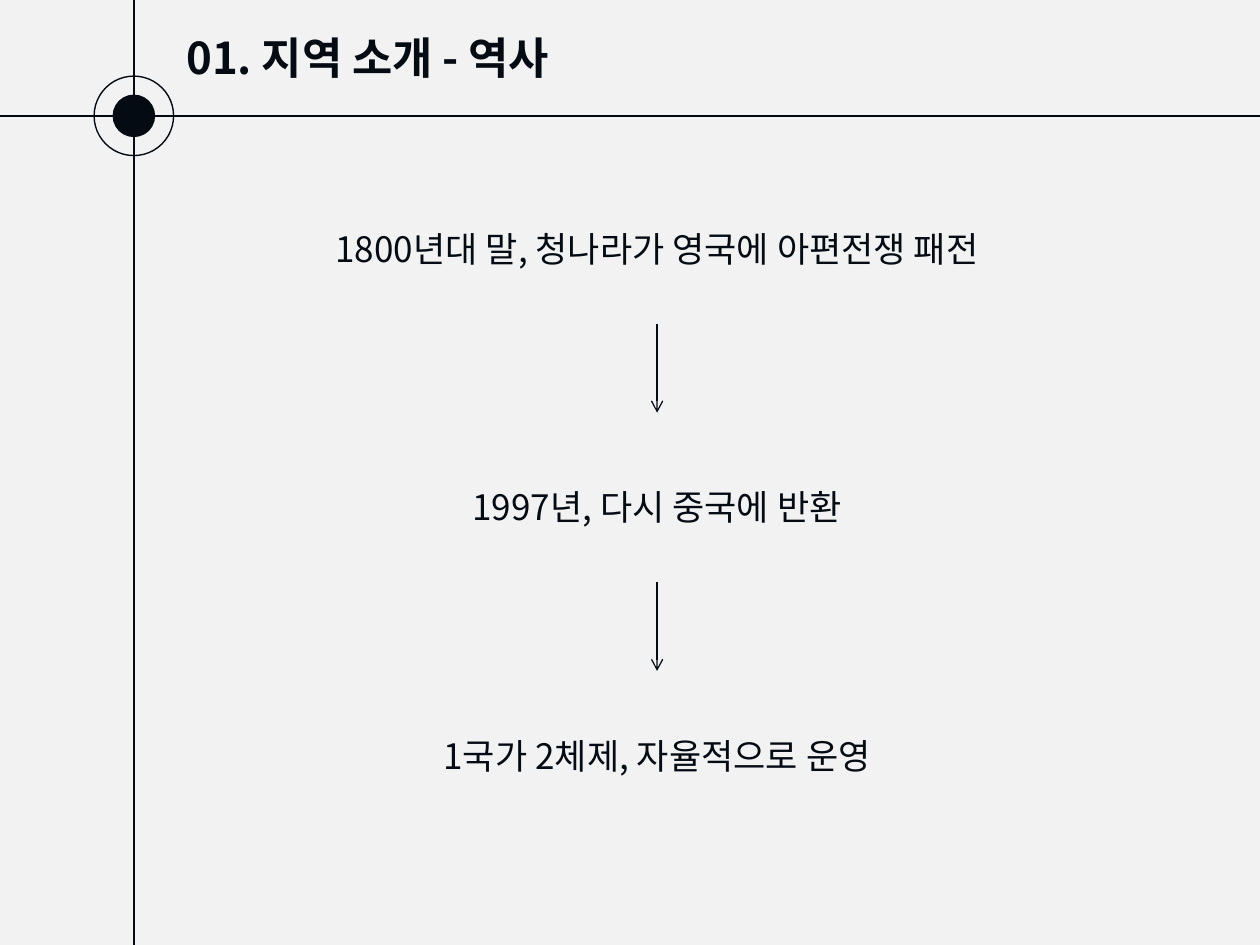
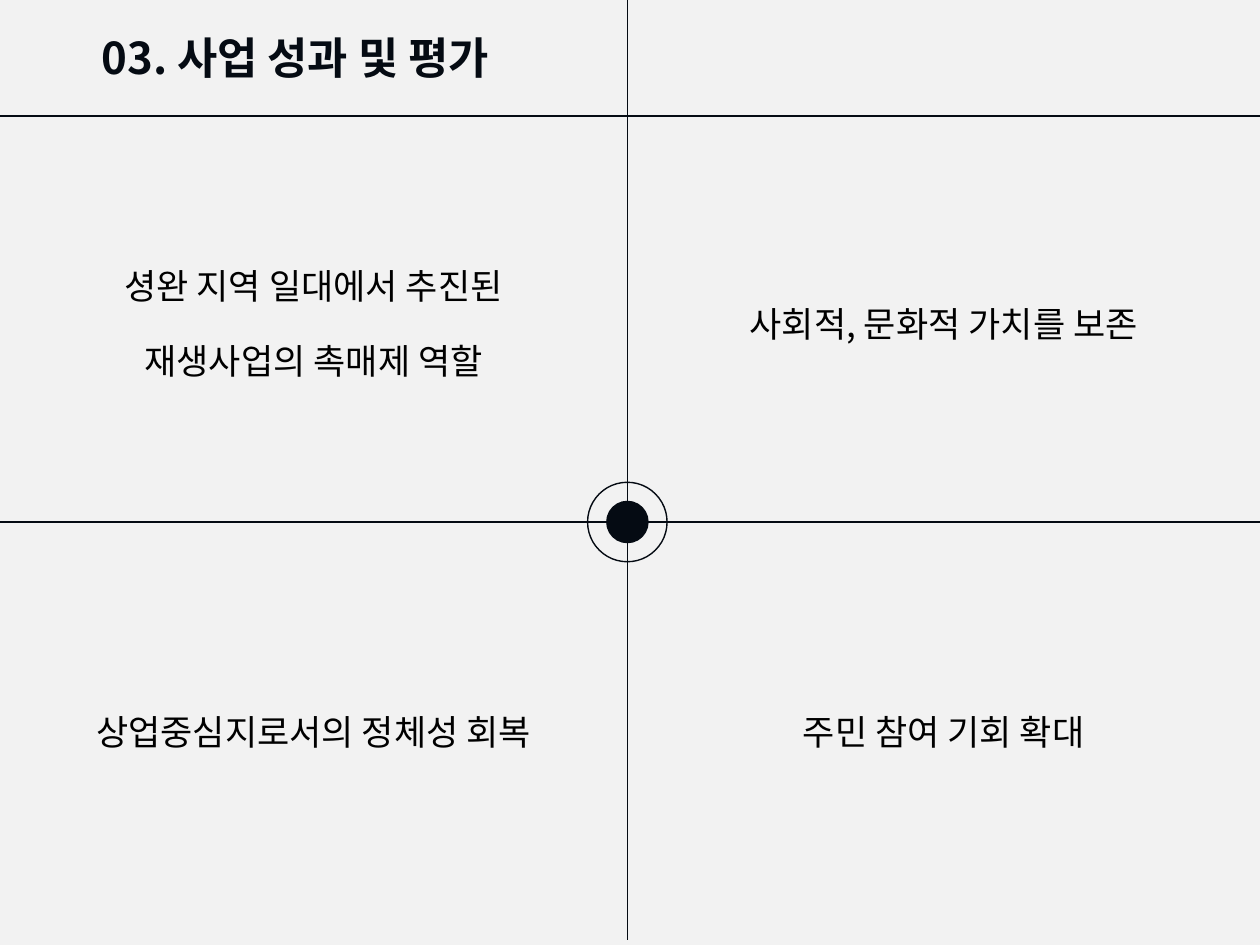
import pptx
import pptx.util
import pptx.dml.color
import pptx.enum.shapes
import pptx.enum.text
import pptx.oxml
import pptx.oxml.ns

Pt = pptx.util.Pt
WIDTH, HEIGHT = 720, 540
COLORS = {"background": "F2F2F2", "ink": "050B13", "black": "000000"}
FONT = "Noto Sans CJK KR"
RULE_Y = 66.2
DOT, RING = 22.3, 45.4


def rgb(name):
    return pptx.dml.color.RGBColor.from_string(COLORS[name])


class Deck:
    """Holds the shared style and the current slide."""

    def __init__(self):
        self.prs = pptx.Presentation()
        self.prs.slide_width, self.prs.slide_height = Pt(WIDTH), Pt(HEIGHT)
        self.slide = None

    def text(self, left, top, width, height, lines, size=20, color="ink",
             bold=False, align="CENTER", gap=0):
        box = self.slide.shapes.add_textbox(Pt(left), Pt(top), Pt(width), Pt(height))
        frame = box.text_frame
        frame.word_wrap = True
        frame.vertical_anchor = pptx.enum.text.MSO_ANCHOR.MIDDLE
        for i, line in enumerate(lines):
            paragraph = frame.add_paragraph() if i else frame.paragraphs[0]
            paragraph.alignment = getattr(pptx.enum.text.PP_ALIGN, align)
            if i:
                paragraph.space_before = Pt(gap)
            run = paragraph.add_run()
            run.text = line
            run.font.name, run.font.size, run.font.bold = FONT, Pt(size), bold
            run.font.color.rgb = rgb(color)
            # East Asian typeface
            east_asian = pptx.oxml.parse_xml(
                f'<a:ea {pptx.oxml.ns.nsdecls("a")} typeface="{FONT}"/>')
            run.font._element.find(pptx.oxml.ns.qn("a:latin")).addnext(east_asian)

    def circle(self, x, y, diameter, weight, filled):
        circle = self.slide.shapes.add_shape(
            pptx.enum.shapes.MSO_SHAPE.OVAL, Pt(x - diameter / 2),
            Pt(y - diameter / 2), Pt(diameter), Pt(diameter))
        circle.shadow.inherit = False
        if filled:
            circle.fill.solid()
            circle.fill.fore_color.rgb = rgb("ink")
        else:
            circle.fill.background()
        circle.line.color.rgb = rgb("ink")
        circle.line.width = Pt(weight)

    def line(self, x1, y1, x2, y2, weight=0.8, arrow=False):
        line = self.slide.shapes.add_connector(
            pptx.enum.shapes.MSO_CONNECTOR.STRAIGHT, Pt(x1), Pt(y1), Pt(x2), Pt(y2))
        line.line.color.rgb = rgb("ink")
        line.line.width = Pt(weight)
        namespace = pptx.oxml.ns.nsdecls("a")
        if arrow:
            line.line._get_or_add_ln().append(
                pptx.oxml.parse_xml(f'<a:tailEnd {namespace} type="arrow"/>'))
        line._element.spPr.append(pptx.oxml.parse_xml(f"<a:effectLst {namespace}/>"))

    def page(self, title, title_left, title_width, axis_x, target_y, axis_end=HEIGHT):
        """Start a slide with its title, target mark, axis and header rule."""
        self.slide = self.prs.slides.add_slide(self.prs.slide_layouts[6])
        self.slide.background.fill.solid()
        self.slide.background.fill.fore_color.rgb = rgb("background")
        self.text(title_left, 0.4, title_width, 64.8, [title],
                  size=25, bold=True, align="LEFT")
        self.circle(axis_x, target_y, DOT, 2, filled=True)
        self.circle(axis_x, target_y, RING, 0.8, filled=False)
        self.line(axis_x, axis_end, axis_x, 0)
        self.line(0, RULE_Y, WIDTH, RULE_Y)


def history(deck):
    deck.page("01. 지역 소개 - 역사", 99.4, 335, 76.5, RULE_Y)
    # Events from top to bottom
    events_left, events_width = 131.8, 487.4
    events = [(116.6, "1800년대 말, 청나라가 영국에 아편전쟁 패전"),
              (264.2, "1997년, 다시 중국에 반환"),
              (406.1, "1국가 2체제, 자율적으로 운영")]
    for top, event in events:
        deck.text(events_left, top, events_width, 51, [event])
    # Arrows below every event but the last
    middle = events_left + events_width / 2
    for top, _ in events[:-1]:
        deck.line(middle, top + 68.4, middle, top + 119.2, weight=0.75, arrow=True)


def results(deck):
    axis_x, middle_y = 358.5, 298.3
    deck.page("03. 사업 성과 및 평가", 51.1, 255.6, axis_x, middle_y, axis_end=537)
    for edge in (WIDTH, 0):
        deck.line(edge, middle_y, axis_x, middle_y)
    # One result in each quadrant
    quadrants = [[["셩완 지역 일대에서 추진된", "재생사업의 촉매제 역할"],
                  ["사회적, 문화적 가치를 보존"]],
                 [["상업중심지로서의 정체성 회복"], ["주민 참여 기회 확대"]]]
    columns = [(0, axis_x), (axis_x, WIDTH - axis_x)]
    for top, row in zip((95.8, 329), quadrants):
        for (left, width), lines in zip(columns, row):
            deck.text(left, top, width, 177.8, lines, color="black", gap=19)


def main():
    deck = Deck()
    history(deck)
    results(deck)
    deck.prs.save("out.pptx")


if __name__ == "__main__":
    main()
